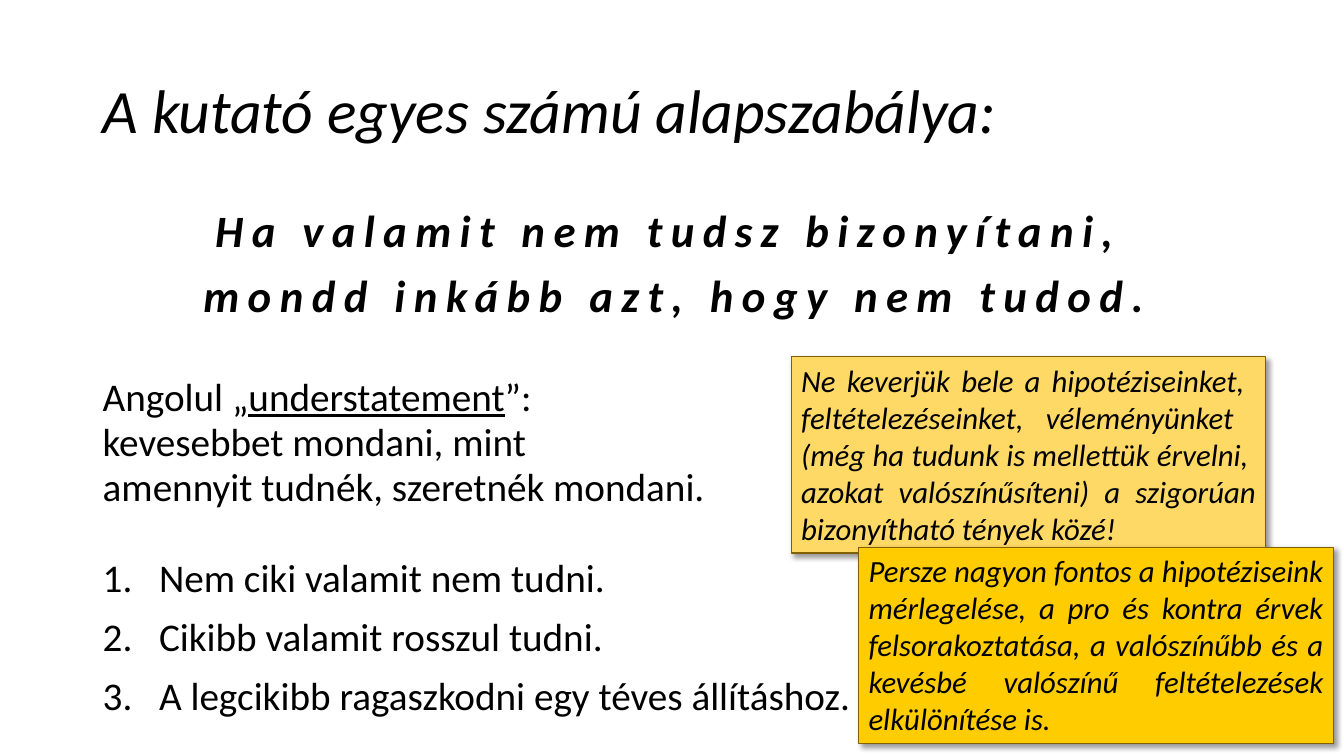
from lxml.etree import SubElement
from pptx import Presentation
from pptx.dml.color import RGBColor
from pptx.enum.shapes import MSO_SHAPE
from pptx.enum.text import MSO_ANCHOR, PP_ALIGN
from pptx.oxml.ns import qn
from pptx.util import Cm, Pt

FONT = "Calibri"
LEFT = 2.34
INDENT = 1.42
NOTE_WIDTH, NOTE_HEIGHT = 11.96, 4.95

TITLE = "A kutató egyes számú alapszabálya:"
RULE = ["Ha valamit nem tudsz bizonyítani, ", "mondd inkább azt, hogy nem tudod."]
LESSONS = [
    "Nem ciki valamit nem tudni.",
    "Cikibb valamit rosszul tudni.",
    "A legcikibb ragaszkodni egy téves állításhoz.",
]
WARNING = [
    "Ne keverjük bele a hipotéziseinket, ",
    "feltételezéseinket, véleményünket ",
    "(még ha tudunk is mellettük érvelni, ",
    "azokat valószínűsíteni) a szigorúan bizonyítható tények közé!",
]
REMARK = [
    "Persze nagyon fontos a hipotéziseink mérlegelése, a pro és kontra érvek "
    "felsorakoztatása, a valószínűbb és a kevésbé valószínű feltételezések "
    "elkülönítése is."
]


def color(hex_code):
    return RGBColor.from_string(hex_code)


def add_span(para, text, size, bold=False, italic=False, underline=False):
    span = para.add_run()
    span.text = text
    font = span.font
    font.name, font.size = FONT, Pt(size)
    font.bold, font.italic, font.underline = bold, italic, underline
    font.color.rgb = color("000000")
    return span


def add_lines(para, lines, size, **style):
    """Add one run per line, with line breaks between them."""
    for number, line in enumerate(lines):
        if number:
            para.add_line_break()
        add_span(para, line, size, **style)


def add_box(page, left, top, width, height):
    box = page.shapes.add_textbox(Cm(left), Cm(top), Cm(width), Cm(height))
    box.text_frame.word_wrap = True
    return box.text_frame


def add_para(frame, first=False, space=10, align=PP_ALIGN.LEFT):
    para = frame.paragraphs[0] if first else frame.add_paragraph()
    para.alignment = align
    para.line_spacing = 0.95
    para.space_before = Pt(space)
    return para


def number_para(para):
    properties = para._p.get_or_add_pPr()
    properties.set("marL", str(Cm(INDENT)))
    properties.set("indent", str(-Cm(INDENT)))
    SubElement(properties, qn("a:buFont"), typeface="+mj-lt")
    SubElement(properties, qn("a:buAutoNum"), type="arabicPeriod")


def add_title(page, left, top, width, height):
    frame = add_box(page, left, top, width, height)
    frame.vertical_anchor = MSO_ANCHOR.MIDDLE
    para = frame.paragraphs[0]
    para.line_spacing = 0.9
    add_span(para, TITLE, 44, italic=True)


def add_body(page, left, top, width, height):
    frame = add_box(page, left, top, width, height)
    for number, line in enumerate(RULE):
        para = add_para(frame, first=number == 0, align=PP_ALIGN.CENTER)
        span = add_span(para, line, 32, bold=True, italic=True)
        span.font._element.set("spc", "600")

    para = add_para(frame, space=38)
    add_span(para, "Angolul „", 28)
    add_span(para, "understatement", 28, underline=True)
    add_lines(para, ["”: ", "kevesebbet mondani, mint",
                     "amennyit tudnék, szeretnék mondani."], 28)

    for number, lesson in enumerate(LESSONS):
        para = add_para(frame, space=10 if number else 33.5)
        number_para(para)
        add_span(para, lesson, 28)


def add_shadow(shape):
    shape.shadow.inherit = False
    effects = shape._element.spPr.find(qn("a:effectLst"))
    shadow = SubElement(effects, qn("a:outerShdw"), blurRad=str(Pt(4)),
                        dist=str(Pt(3)), dir="2700000", algn="tl", rotWithShape="0")
    black = SubElement(shadow, qn("a:srgbClr"), val="000000")
    SubElement(black, qn("a:alpha"), val="40000")


def add_note(page, left, top, lines, fill):
    note = page.shapes.add_shape(MSO_SHAPE.RECTANGLE, Cm(left), Cm(top),
                                 Cm(NOTE_WIDTH), Cm(NOTE_HEIGHT))
    note.fill.solid()
    note.fill.fore_color.rgb = color(fill)
    note.line.color.rgb = color("806000")
    note.line.width = Pt(1)
    add_shadow(note)
    frame = note.text_frame
    frame.word_wrap = True
    frame.vertical_anchor = MSO_ANCHOR.TOP
    para = frame.paragraphs[0]
    para.alignment = PP_ALIGN.JUSTIFY
    add_lines(para, lines, 22, italic=True)


def main():
    deck = Presentation()
    deck.slide_width, deck.slide_height = Cm(33.87), Cm(19.05)
    page = deck.slides.add_slide(deck.slide_layouts[6])
    add_title(page, LEFT, 1.02, 29.21, 3.68)
    add_body(page, LEFT, 5.08, 29.29, 13.49)
    add_note(page, 19.94, 8.99, WARNING, "FFD966")
    add_note(page, 21.64, 13.79, REMARK, "FFCC00")
    deck.save("out.pptx")


if __name__ == "__main__":
    main()
